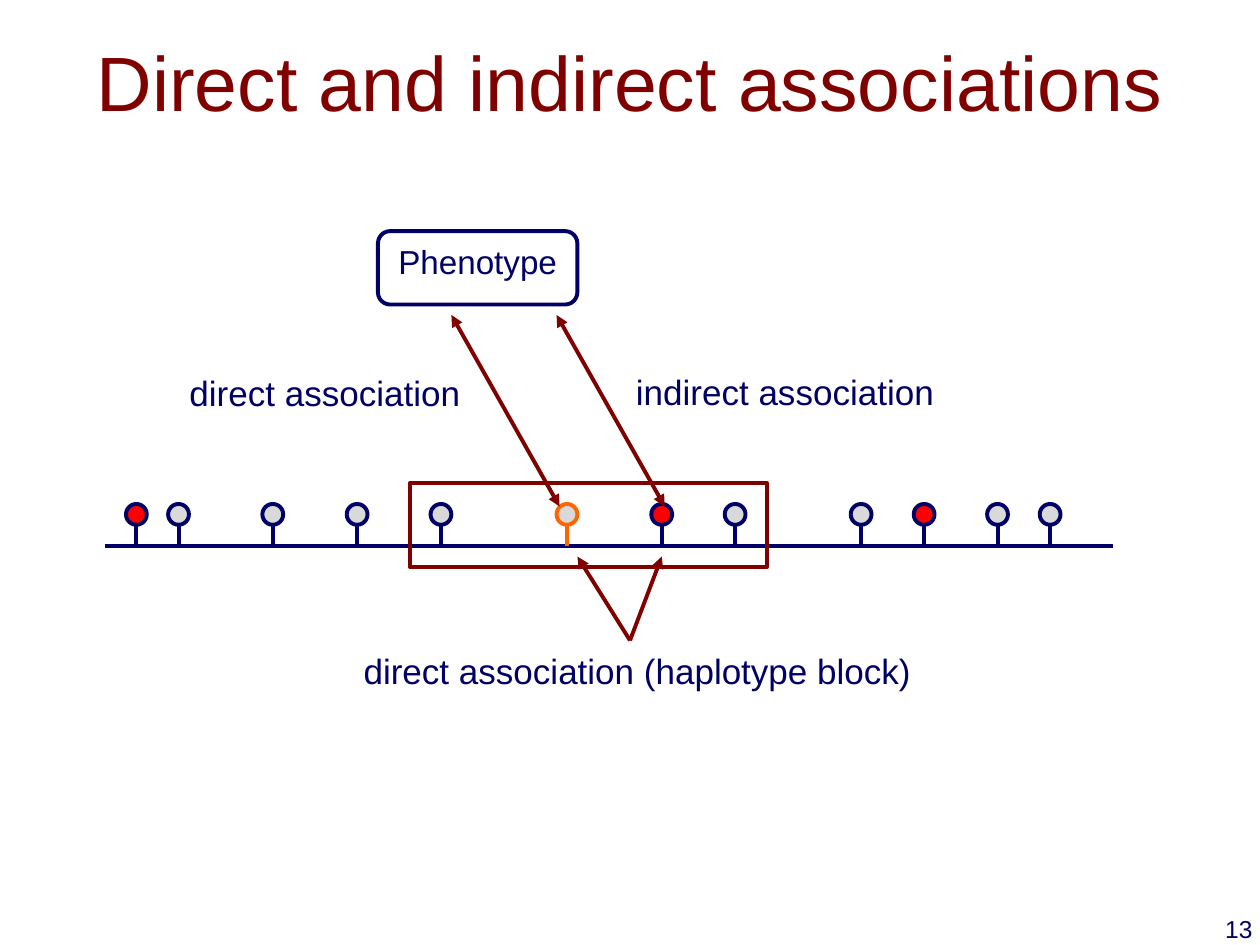
from lxml.etree import SubElement
from pptx import Presentation
from pptx.dml.color import RGBColor
from pptx.enum.shapes import MSO_CONNECTOR, MSO_SHAPE
from pptx.enum.text import MSO_ANCHOR, MSO_AUTO_SIZE, PP_ALIGN
from pptx.oxml.ns import qn
from pptx.util import Cm, Pt

COLORS = {
    "navy": "000066",
    "maroon": "800000",
    "red": "FF0000",
    "gray": "D9D9D9",
    "orange": "FF6600",
}


class SlideBuilder:
    """Style of the diagram and the slide it is drawn on."""

    font = "Arial"
    line_width = Pt(2.25)

    def __init__(self, slide):
        self.slide = slide

    def color(self, name):
        return RGBColor.from_string(COLORS[name])

    def set_text(self, frame, text, size, color, align):
        paragraph = frame.paragraphs[0]
        paragraph.text = text
        paragraph.alignment = align
        paragraph.font.name = self.font
        paragraph.font.size = Pt(size)
        paragraph.font.color.rgb = self.color(color)

    def text(self, box, text, size, color="navy", align=PP_ALIGN.LEFT,
             anchor=MSO_ANCHOR.TOP, wrap=True):
        frame = self.slide.shapes.add_textbox(*map(Cm, box)).text_frame
        frame.word_wrap = wrap
        frame.vertical_anchor = anchor
        if not wrap:
            frame.auto_size = MSO_AUTO_SIZE.SHAPE_TO_FIT_TEXT
        self.set_text(frame, text, size, color, align)

    def shape(self, kind, box, line, fill=None):
        shape = self.slide.shapes.add_shape(kind, *map(Cm, box))
        shape.shadow.inherit = False
        if fill:
            shape.fill.solid()
            shape.fill.fore_color.rgb = self.color(fill)
        else:
            shape.fill.background()
        shape.line.color.rgb = self.color(line)
        shape.line.width = self.line_width
        return shape

    def line(self, start, end, color, arrows=()):
        connector = self.slide.shapes.add_connector(
            MSO_CONNECTOR.STRAIGHT, *map(Cm, start + end))
        connector.line.color.rgb = self.color(color)
        connector.line.width = self.line_width
        properties = connector._element.spPr
        for tip in arrows:
            SubElement(properties.find(qn("a:ln")), qn(f"a:{tip}"), type="triangle")
        SubElement(properties, qn("a:effectLst"))

    def marker(self, x, axis_y, fill, line="navy", size=0.42):
        """A locus: a stem on the chromosome with a round head."""
        stem_top = axis_y - 0.43
        self.line((x, axis_y), (x, stem_top), line)
        self.shape(MSO_SHAPE.OVAL, (x - size / 2, stem_top - size, size, size),
                   line, fill)


def main():
    presentation = Presentation()
    presentation.slide_width = Cm(25.4)
    presentation.slide_height = Cm(19.05)
    builder = SlideBuilder(
        presentation.slides.add_slide(presentation.slide_layouts[6]))

    # Title
    builder.text((0, 0.03, 25.4, 3.18), "Direct and indirect associations", 44,
                 "maroon", PP_ALIGN.CENTER, MSO_ANCHOR.MIDDLE)

    # Chromosome with its loci
    axis_y = 11.01
    builder.line((2.12, axis_y), (22.44, axis_y), "navy")
    for x in (2.75, 13.34, 18.63):
        builder.marker(x, axis_y, "red")
    for x in (3.6, 5.5, 7.2, 8.89, 14.82, 17.36, 20.11, 21.17):
        builder.marker(x, axis_y, "gray")
    builder.marker(11.43, axis_y, "gray", "orange")

    # Haplotype block
    builder.shape(MSO_SHAPE.RECTANGLE, (8.26, 9.74, 7.2, 1.69), "maroon")
    for tip_x in (13.34, 11.64):
        builder.line((12.7, 12.91), (tip_x, 11.22), "maroon", ["tailEnd"])

    # Phenotype and its associations
    phenotype = builder.shape(MSO_SHAPE.ROUNDED_RECTANGLE,
                              (7.62, 4.66, 4.02, 1.48), "navy")
    phenotype.text_frame.vertical_anchor = MSO_ANCHOR.TOP
    builder.set_text(phenotype.text_frame, "Phenotype", 19, "navy",
                     PP_ALIGN.CENTER)
    for top_x, locus_x in ((9.1, 11.28), (11.22, 13.4)):
        builder.line((top_x, 6.35), (locus_x, 10.21), "maroon",
                     ["headEnd", "tailEnd"])

    # Labels
    for left, top, width, label in (
            (7.08, 12.96, 11.64, "direct association (haplotype block)"),
            (12.57, 7.34, 6.59, "indirect association"),
            (3.57, 7.36, 6.03, "direct association")):
        builder.text((left, top, width, 1.11), label, 20, wrap=False)

    # Page number
    builder.text((20.22, 18.31, 5.28, 1.27), "13", 14, align=PP_ALIGN.RIGHT)

    presentation.save("out.pptx")


if __name__ == "__main__":
    main()
